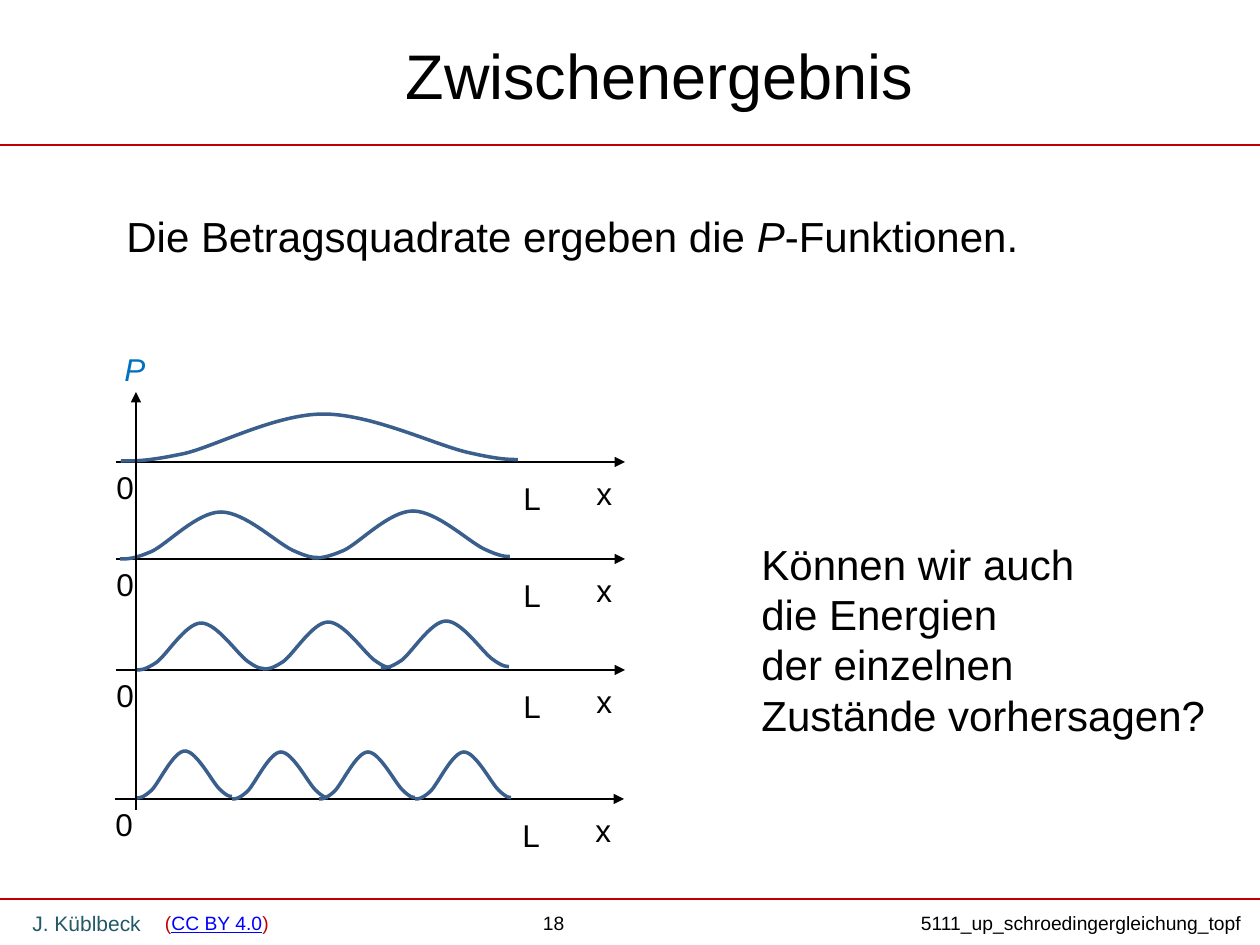
"""Build the slide on the probability functions of the potential well."""
import dataclasses

import lxml.etree
import pptx
import pptx.dml.color
import pptx.enum.shapes
import pptx.enum.text
import pptx.oxml.ns
import pptx.util


@dataclasses.dataclass(frozen=True)
class Theme:
    font: str = "Arial"
    black: str = "000000"
    red: str = "C00000"
    teal: str = "215968"
    link: str = "0000FF"
    blue: str = "0070C0"
    curve: str = "3A5F8C"
    title: int = 36
    body: int = 24
    label: int = 18
    author: int = 12
    footer: int = 11


theme = Theme()
px = 914400 / 126
qn = pptx.oxml.ns.qn


def add_text(frame, lines, size, inset=True):
    """Fill a frame with lines, each a list of (text, colour, style) runs."""
    frame.word_wrap = True
    if not inset:
        frame.margin_left = frame.margin_right = 0
        frame.margin_top = frame.margin_bottom = 0
    paragraph = frame.paragraphs[0]
    for index, line in enumerate(lines):
        if index:
            paragraph.add_line_break()
        for text, colour, style in line:
            run = paragraph.add_run()
            run.text = text
            run.font.name = theme.font
            run.font.size = pptx.util.Pt(size)
            run.font.color.rgb = pptx.dml.color.RGBColor.from_string(colour)
            run.font.italic = style == "italic"
            run.font.underline = style == "underline"
    return paragraph


def add_line(start, end, colour, width, arrow=False):
    """Draw a straight line between two points given in px."""
    connector = slide.shapes.add_connector(
        pptx.enum.shapes.MSO_CONNECTOR.STRAIGHT,
        *[round(value * px) for value in (*start, *end)])
    connector.line.color.rgb = pptx.dml.color.RGBColor.from_string(colour)
    connector.line.width = pptx.util.Pt(width)
    properties = connector._element.spPr
    if arrow:
        outline = properties.find(qn("a:ln"))
        lxml.etree.SubElement(outline, qn("a:tailEnd"), type="triangle")
    lxml.etree.SubElement(properties, qn("a:effectLst"))


presentation = pptx.Presentation()
presentation.slide_width = round(1260 * px)
presentation.slide_height = round(945 * px)
slide = presentation.slides.add_slide(presentation.slide_layouts[5])

title = slide.shapes.title
title.left, title.top, title.width, title.height = [
    round(value * px) for value in (0, 2, 1319, 145)]
title.text_frame.vertical_anchor = pptx.enum.text.MSO_ANCHOR.MIDDLE
heading = add_text(title.text_frame, [[("Zwischenergebnis", theme.black, "")]], theme.title)
heading.alignment = pptx.enum.text.PP_ALIGN.CENTER

for rule_y in (145, 899):
    add_line((0, rule_y), (1260, rule_y), theme.red, 1)

statement = [("Die Betragsquadrate ergeben die ", theme.black, ""),
             ("P", theme.black, "italic"),
             ("-Funktionen.", theme.black, "")]
question = [[(line, theme.black, "")] for line in (
    "Können wir auch ", "die Energien", "der einzelnen ", "Zustände vorhersagen?")]
licence = [("(", theme.red, ""),
           ("CC BY 4.0", theme.link, "underline"),
           (")\t", theme.red, ""),
           ("18\t5111_up_schroedingergleichung_topf", theme.black, "")]
texts = [
    ((20, 904, 195, 38), [[("J. Küblbeck", theme.teal, "")]], theme.author, True),
    ((165, 911, 1095, 24), [licence], theme.footer, False),
    ((114, 204, 1070, 63), [statement], theme.body, True),
    ((112, 344, 49, 50), [[("P", theme.blue, "italic")]], theme.label, True),
    ((749, 532, 496, 217), question, theme.body, True),
]

axes = [
    (462, 116, 397, [(121, 461)]),
    (559, 116, 198, [(120, 559), (312, 558)]),
    (670, 116, 128, [(136, 670), (263, 669), (381, 668)]),
    (799, 115, 96, [(136, 798), (232, 799), (319, 799), (415, 799)]),
]
for axis_y, axis_x, bell_width, bells in axes:
    add_line((axis_x, axis_y), (axis_x + 509, axis_y), theme.black, 0.75, arrow=True)
    for label, offset_x, offset_y, width in (("x", 468, 6, 43), ("0", -12, 0, 45),
                                              ("L", 395, 11, 45)):
        texts.append(((axis_x + offset_x, axis_y + offset_y, width, 50),
                      [[(label, theme.black, "")]], theme.label, True))

for box, lines, size, inset in texts:
    shape = slide.shapes.add_textbox(*[round(value * px) for value in box])
    paragraph = add_text(shape.text_frame, lines, size, inset)
    if lines == [licence]:
        tabs = lxml.etree.SubElement(paragraph._p.get_or_add_pPr(), qn("a:tabLst"))
        for stop in (378, 756):
            lxml.etree.SubElement(tabs, qn("a:tab"), pos=str(round(stop * px)), algn="l")

bell_height = 47
bell_points = [
    (0, 0),
    (0.04, 0), (0.07, 0), (0.16, 0.16),
    (0.24, 0.32), (0.39, 1), (0.51, 1),
    (0.63, 1), (0.79, 0.35), (0.87, 0.19),
    (0.95, 0.03), (0.98, 0.03), (1, 0.03),
]
for axis_y, axis_x, bell_width, bells in axes:
    for left, bottom in bells:
        points = [(round((left + x * bell_width) * px), round((bottom - y * bell_height) * px))
                  for x, y in bell_points]
        builder = slide.shapes.build_freeform(*points[0])
        builder.add_line_segments(points[1:], close=False)
        curve = builder.convert_to_shape()
        outline = next(curve._element.iter(qn("a:path")))
        for index, segment in enumerate(outline.findall(qn("a:lnTo"))):
            if index % 3 == 0:
                bezier = lxml.etree.SubElement(outline, qn("a:cubicBezTo"))
            bezier.append(segment[0])
            outline.remove(segment)
        curve.fill.background()
        curve.line.color.rgb = pptx.dml.color.RGBColor.from_string(theme.curve)
        curve.line.width = pptx.util.Pt(2)
        curve.shadow.inherit = False

add_line((136, 810), (136, 392), theme.black, 0.75, arrow=True)

presentation.save("out.pptx")
